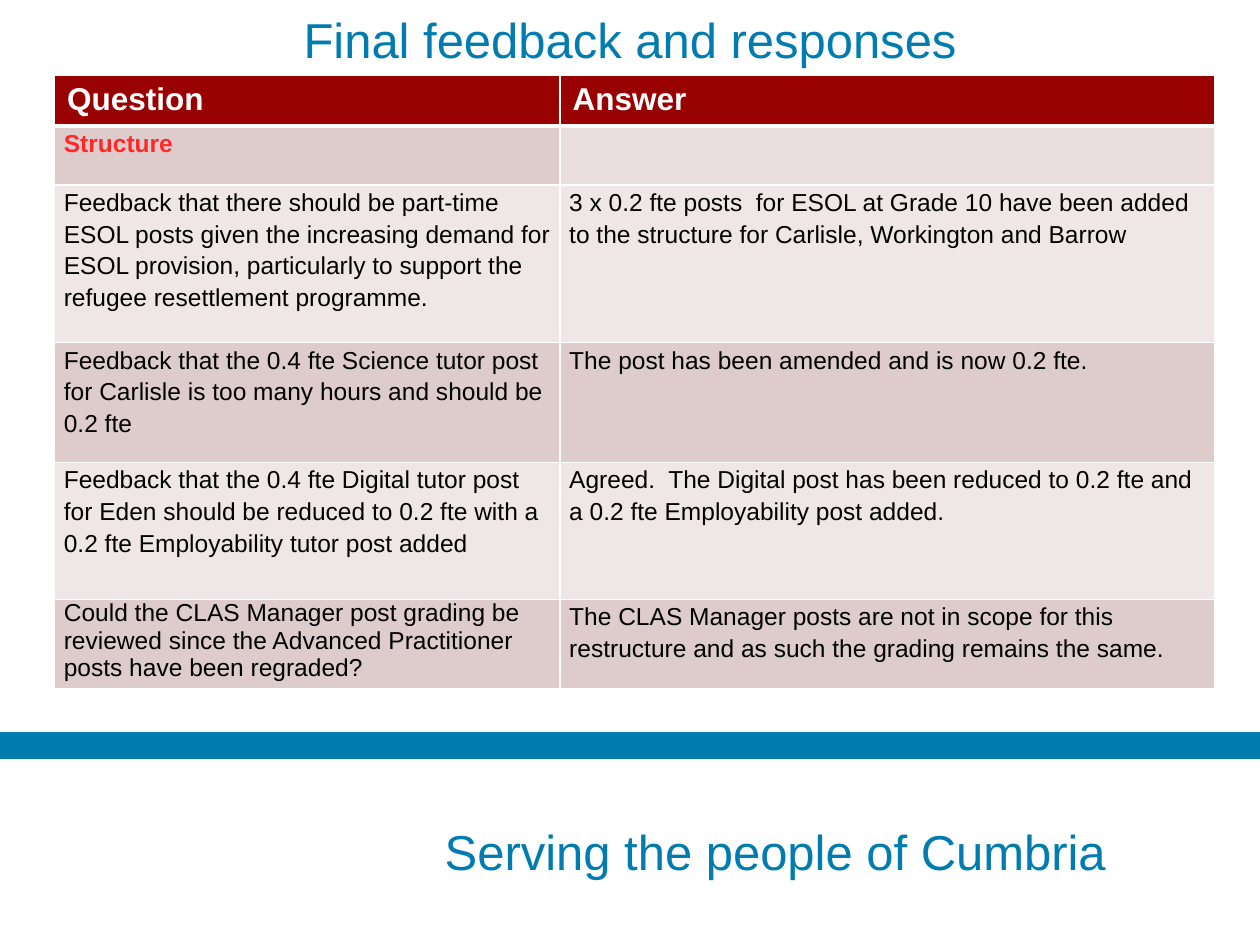
"""Build the slide of final feedback questions and responses."""
import dataclasses

import pptx
import pptx.dml.color
import pptx.enum.shapes
import pptx.enum.text
import pptx.oxml
import pptx.oxml.ns
import pptx.util

Pt = pptx.util.Pt
ALIGN = pptx.enum.text.PP_ALIGN
ANCHOR = pptx.enum.text.MSO_ANCHOR


@dataclasses.dataclass(frozen=True)
class Theme:
    """Colours, font and type sizes."""
    font: str = "Arial"
    blue: str = "007CB0"
    white: str = "FFFFFF"
    black: str = "000000"
    header: str = "990000"
    section: str = "FF2929"
    section_blank: str = "EADDDD"
    bands: tuple = ("EFE7E7", "DECCCC")
    title_size: int = 28
    header_size: int = 18
    body_size: int = 14


class SlideBuilder:
    """Hold the theme and the slide, and add each kind of element."""

    def __init__(self, slide, theme):
        self.slide = slide
        self.theme = theme

    def color(self, value):
        return pptx.dml.color.RGBColor.from_string(value)

    def style(self, paragraph, size, color, bold=False):
        for run in paragraph.runs:
            run.font.name = self.theme.font
            run.font.size = Pt(size)
            run.font.bold = bold
            run.font.color.rgb = self.color(color)

    def heading(self, text, left, top, width, height, alignment, anchor, inset):
        shape = self.slide.shapes.add_textbox(Pt(left), Pt(top), Pt(width), Pt(height))
        text_frame = shape.text_frame
        text_frame.word_wrap = True
        text_frame.vertical_anchor = anchor
        text_frame.margin_top = Pt(inset)
        text_frame.margin_bottom = Pt(0)
        text_frame.text = text
        paragraph = text_frame.paragraphs[0]
        paragraph.alignment = alignment
        self.style(paragraph, self.theme.title_size, self.theme.blue)

    def rule(self, left, right, y, weight):
        connector = self.slide.shapes.add_connector(
            pptx.enum.shapes.MSO_CONNECTOR.STRAIGHT, Pt(left), Pt(y), Pt(right), Pt(y))
        connector.line.color.rgb = self.color(self.theme.blue)
        connector.line.width = Pt(weight)
        properties = connector._element.spPr
        properties.append(properties.makeelement(pptx.oxml.ns.qn("a:effectLst"), {}))

    def borders(self, cell, bottom, top):
        properties = cell._tc.get_or_add_tcPr()
        for side, weight in (("L", 1), ("R", 1), ("T", top), ("B", bottom)):
            properties.append(pptx.oxml.parse_xml(
                f'<a:ln{side} {pptx.oxml.ns.nsdecls("a")} w="{Pt(weight)}">'
                f'<a:solidFill><a:srgbClr val="{self.theme.white}"/></a:solidFill>'
                f'</a:ln{side}>'))

    def cell(self, cell, text, fill, size, color, bold, spacing, insets, bottom=1, top=1):
        self.borders(cell, bottom, top)
        cell.fill.solid()
        cell.fill.fore_color.rgb = self.color(fill)
        cell.margin_left = cell.margin_right = Pt(insets[0])
        cell.margin_top = cell.margin_bottom = Pt(insets[1])
        cell.text = text
        paragraph = cell.text_frame.paragraphs[0]
        paragraph.line_spacing = spacing
        self.style(paragraph, size, color, bold)

    def table(self, rows, left, top, widths, heights):
        theme = self.theme
        table = self.slide.shapes.add_table(
            len(rows), len(widths), Pt(left), Pt(top),
            Pt(sum(widths)), Pt(sum(heights))).table
        for column, width in zip(table.columns, widths):
            column.width = Pt(width)
        for row_index, (texts, height) in enumerate(zip(rows, heights)):
            table.rows[row_index].height = Pt(height)
            for column_index, text in enumerate(texts):
                cell = table.cell(row_index, column_index)
                if row_index == 0:
                    self.cell(cell, text, theme.header, theme.header_size,
                              theme.white, True, 1.0, (7.2, 3.6), bottom=3)
                    continue
                is_section = row_index == 1
                is_single = row_index == len(rows) - 1 and column_index == 0
                fill = theme.bands[row_index % 2] if text else theme.section_blank
                self.cell(cell, text, fill, theme.body_size,
                          theme.section if is_section else theme.black, is_section,
                          1.0 if is_single else 1.15, (5.3, 0),
                          top=3 if is_section else 1)


def main():
    presentation = pptx.Presentation()
    presentation.slide_width = Pt(720)
    presentation.slide_height = Pt(540)
    slide = presentation.slides.add_slide(presentation.slide_layouts[6])
    builder = SlideBuilder(slide, Theme())
    builder.rule(720, 0, 426, 15)
    builder.heading("Serving the people of Cumbria", 247, 461.5, 425.5, 41,
                    ALIGN.LEFT, ANCHOR.TOP, 8)
    builder.heading("Final feedback and responses", 54, 3.6, 612, 34,
                    ALIGN.CENTER, ANCHOR.MIDDLE, 3.6)
    rows = [
        ("Question", "Answer"),
        ("Structure", ""),
        ("Feedback that there should be part-time ESOL posts given the increasing "
         "demand for ESOL provision, particularly to support the refugee "
         "resettlement programme.",
         "3 x 0.2 fte posts  for ESOL at Grade 10 have been added to the structure "
         "for Carlisle, Workington and Barrow"),
        ("Feedback that the 0.4 fte Science tutor post for Carlisle is too many "
         "hours and should be 0.2 fte",
         "The post has been amended and is now 0.2 fte."),
        ("Feedback that the 0.4 fte Digital tutor post for Eden should be reduced "
         "to 0.2 fte with a 0.2 fte Employability tutor post added",
         "Agreed.  The Digital post has been reduced to 0.2 fte and a 0.2 fte "
         "Employability post added."),
        ("Could the CLAS Manager post grading be reviewed since the Advanced "
         "Practitioner posts have been regraded?",
         "The CLAS Manager posts are not in scope for this restructure and as such "
         "the grading remains the same."),
    ]
    builder.table(rows, 31.2, 43.2, (288.8, 374.4), (28.8, 33.8, 90, 68.4, 78.4, 51))
    presentation.save("out.pptx")


if __name__ == "__main__":
    main()
